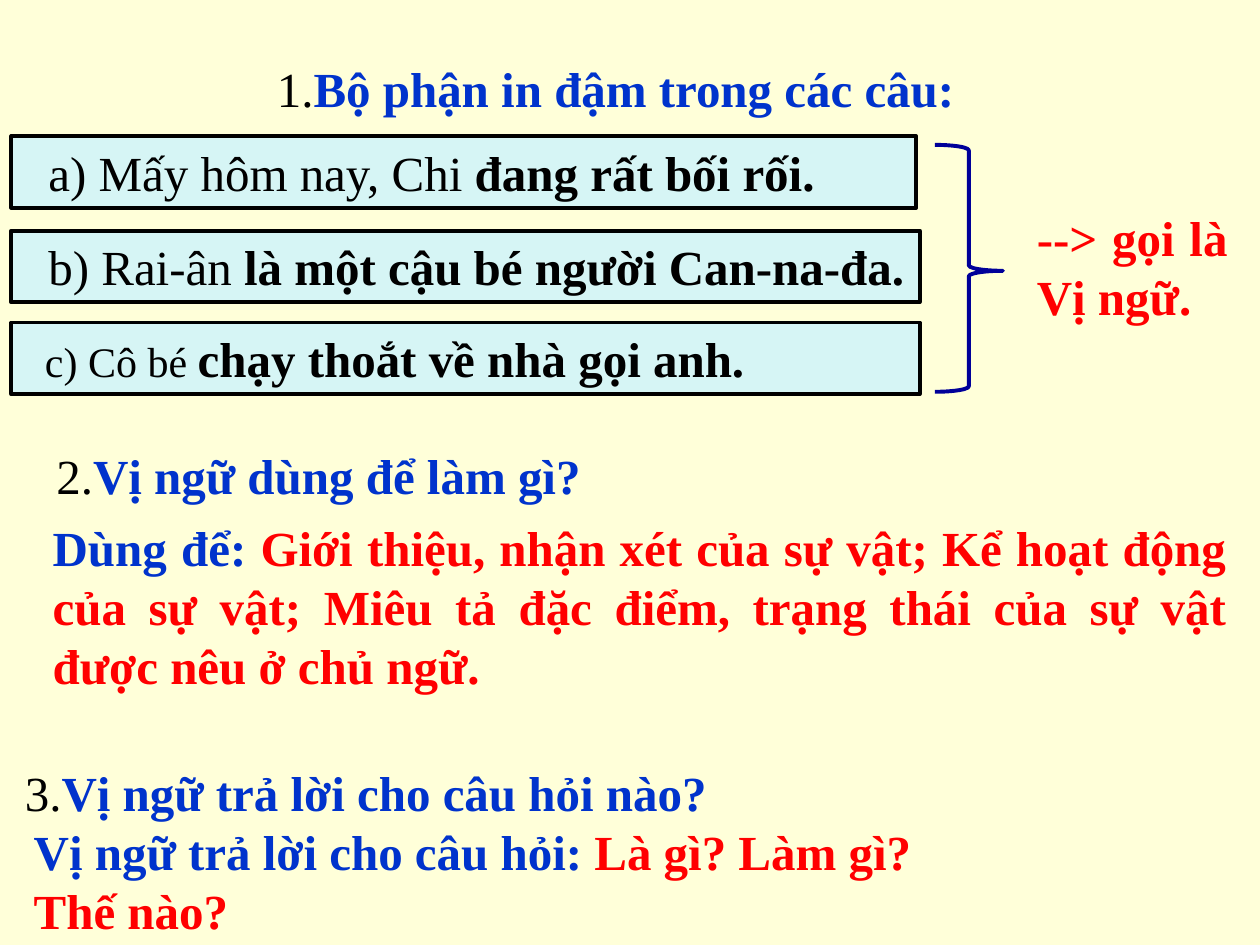
from dataclasses import dataclass
from typing import Optional

from pptx import Presentation
from pptx.dml.color import RGBColor
from pptx.enum.shapes import MSO_SHAPE as Shape
from pptx.enum.text import MSO_ANCHOR as Anchor, MSO_AUTO_SIZE as AutoSize, PP_ALIGN as Align
from pptx.util import Pt

CREAM = RGBColor(0xFF, 0xFF, 0xD9)
PALE_CYAN = RGBColor(0xD6, 0xF5, 0xF5)
BLACK = RGBColor(0, 0, 0)
BLUE = RGBColor(0x00, 0x33, 0xCC)
NAVY = RGBColor(0x00, 0x00, 0x99)
RED = RGBColor(0xFF, 0, 0)

FONT_NAME = "Times New Roman"
LINE_HEIGHT = 41
INSET = 7.2
LINE_WIDTH = Pt(2.25)


@dataclass(frozen=True)
class Span:
    text: str
    color: RGBColor = BLACK
    bold: bool = True
    size: float = 28


@dataclass(frozen=True)
class TextBlock:
    left: float
    top: float
    width: float
    paragraphs: list[list[Span]]
    height: float = LINE_HEIGHT
    indent: float = 0
    align: Align = Align.LEFT
    fill: Optional[RGBColor] = None


def heading(left: float, top: float, width: float, number: str, text: str) -> TextBlock:
    return TextBlock(left, top, width,
                     [[Span(number, bold=False), Span(text, BLUE)]], indent=7)


def example(top: float, width: float, subject: str, predicate: str,
            size: float = 28) -> TextBlock:
    return TextBlock(6.5, top, width,
                     [[Span(subject, bold=False, size=size), Span(predicate)]],
                     indent=size / 2, fill=PALE_CYAN)


BLOCKS = [
    heading(144, 30.2, 523.4, "1.", "Bộ phận in đậm trong các câu:"),
    TextBlock(585.4, 115.2, 123.1, [[Span("--> gọi là Vị ngữ.", RED)]],
              height=75, align=Align.JUSTIFY),
    heading(18, 251.3, 633.6, "2.", "Vị ngữ dùng để làm gì?"),
    example(77.8, 517, "a) Mấy hôm nay, Chi ", "đang rất bối rối."),
    example(131.8, 519, "b) Rai-ân ", "là một cậu bé người Can-na-đa."),
    example(184.3, 519, "c) Cô bé ", "chạy thoắt về nhà gọi anh.", size=24),
    heading(0, 432, 633.6, "3.", "Vị ngữ trả lời cho câu hỏi nào?"),
    TextBlock(23, 292.3, 684.7,
              [[Span("Dùng để: ", BLUE),
                Span("Giới thiệu, nhận xét của sự vật; Kể hoạt động của sự vật; "
                     "Miêu tả đặc điểm, trạng thái của sự vật được nêu ở chủ ngữ.", RED)]],
              height=108.7, align=Align.JUSTIFY),
    TextBlock(12.2, 465.8, 522,
              [[Span("Vị ngữ trả lời cho câu hỏi: ", BLUE), Span("Là gì? Làm gì?", RED)],
               [Span("Thế nào?", RED)]],
              height=75, align=Align.JUSTIFY),
]


def draw_block(page, block: TextBlock) -> None:
    place = [Pt(value) for value in (block.left, block.top, block.width, block.height)]
    if block.fill is None:
        box = page.shapes.add_textbox(*place)
    else:
        box = page.shapes.add_shape(Shape.RECTANGLE, *place)
        box.shadow.inherit = False
        box.fill.solid()
        box.fill.fore_color.rgb = block.fill
        box.line.color.rgb = BLACK
        box.line.width = LINE_WIDTH

    frame = box.text_frame
    frame_format = {
        "word_wrap": True,
        "auto_size": AutoSize.SHAPE_TO_FIT_TEXT,
        "vertical_anchor": Anchor.TOP,
        "margin_left": Pt(INSET + block.indent),
    }
    for name, value in frame_format.items():
        setattr(frame, name, value)

    for index, spans in enumerate(block.paragraphs):
        para = frame.add_paragraph() if index else frame.paragraphs[0]
        para.alignment = block.align
        for span in spans:
            run = para.add_run()
            run.text = span.text
            font_format = {"name": FONT_NAME, "size": Pt(span.size), "bold": span.bold}
            for name, value in font_format.items():
                setattr(run.font, name, value)
            run.font.color.rgb = span.color


def draw_brace(page, left: float, top: float, width: float, height: float) -> None:
    brace = page.shapes.add_shape(Shape.RIGHT_BRACE, Pt(left), Pt(top), Pt(width), Pt(height))
    brace.shadow.inherit = False
    brace.fill.background()
    brace.line.color.rgb = NAVY
    brace.line.width = LINE_WIDTH
    brace.adjustments[0] = 0.08
    brace.adjustments[1] = 0.51


def main() -> None:
    deck = Presentation()
    deck.slide_width, deck.slide_height = Pt(720), Pt(540)
    page = deck.slides.add_slide(deck.slide_layouts[6])
    page.background.fill.solid()
    page.background.fill.fore_color.rgb = CREAM
    for block in BLOCKS:
        draw_block(page, block)
    draw_brace(page, 534.2, 82.8, 38.9, 141.1)
    deck.save("out.pptx")


if __name__ == "__main__":
    main()
